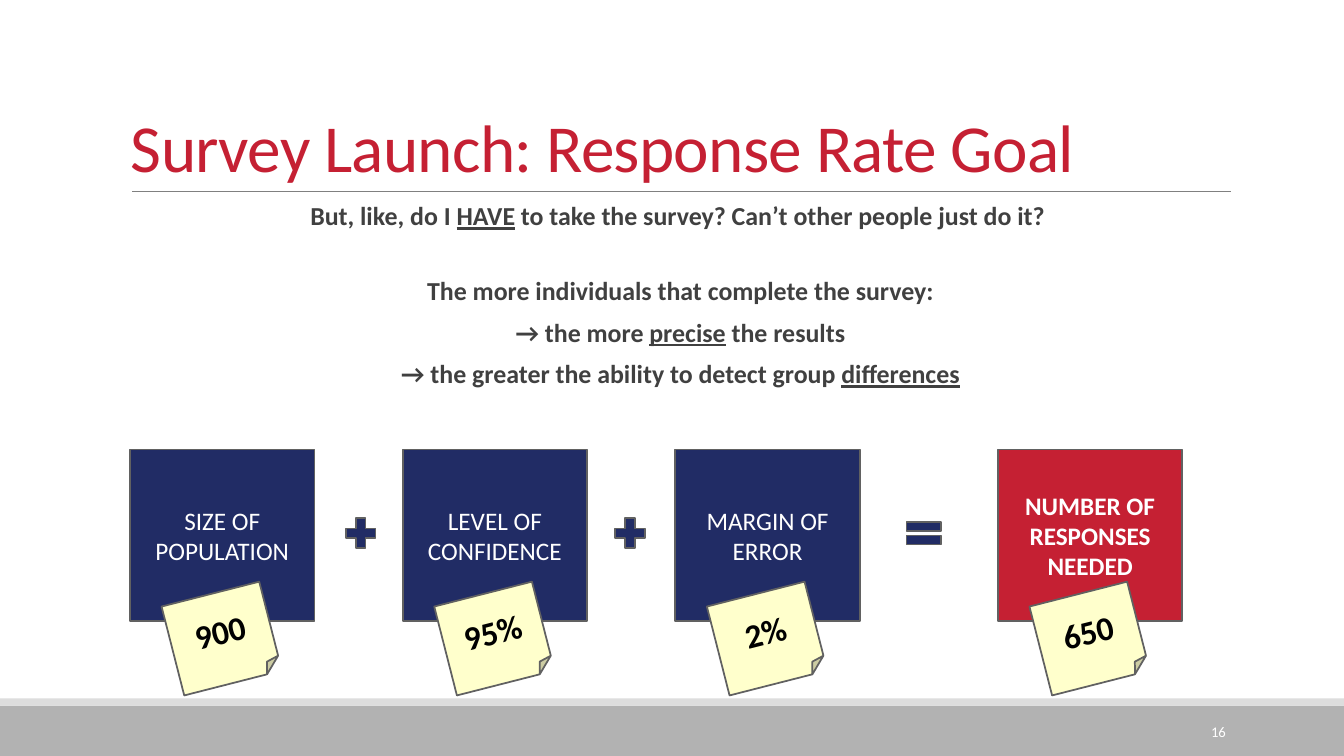
from lxml.etree import SubElement
from pptx import Presentation
from pptx.dml.color import RGBColor
from pptx.enum.shapes import MSO_CONNECTOR, MSO_SHAPE
from pptx.enum.text import MSO_ANCHOR, PP_ALIGN
from pptx.oxml.ns import qn
from pptx.util import Inches, Pt

COLUMNS, ROWS = 133.33, 75
NAVY, RED, NOTE = "212C65", "C52033", "FFFFCC"
WHITE, BLACK, DARK, OUTLINE = "FFFFFF", "000000", "404040", "616161"


def rgb(value):
    return RGBColor.from_string(value)


class SlideBuilder:
    """Places elements on a grid of COLUMNS by ROWS in one style."""

    font = "Calibri"
    line_width = 1.25

    def __init__(self, prs):
        self.cell_w = prs.slide_width / COLUMNS
        self.cell_h = prs.slide_height / ROWS
        self.s = prs.slides.add_slide(prs.slide_layouts[6])

    def box(self, col, row, cols, rows):
        return (round(col * self.cell_w), round(row * self.cell_h),
                round(cols * self.cell_w), round(rows * self.cell_h))

    def run(self, p, text, size, color, bold=False, underline=False):
        r = p.add_run()
        r.text = text
        r.font.name, r.font.size = self.font, Pt(size)
        r.font.bold, r.font.underline = bold, underline
        r.font.color.rgb = rgb(color)
        return r

    def text_box(self, at, anchor=MSO_ANCHOR.TOP):
        tf = self.s.shapes.add_textbox(*self.box(*at)).text_frame
        tf.word_wrap = True
        tf.vertical_anchor = anchor
        return tf

    def shape(self, kind, at, fill, outline=OUTLINE, rotation=0):
        sp = self.s.shapes.add_shape(kind, *self.box(*at))
        sp.shadow.inherit = False
        sp.rotation = rotation
        sp.fill.solid()
        sp.fill.fore_color.rgb = rgb(fill)
        if outline:
            sp.line.color.rgb = rgb(outline)
            sp.line.width = Pt(self.line_width)
        else:
            sp.line.fill.background()
        return sp

    def label(self, sp, text, size, color, bold):
        tf = sp.text_frame
        tf.word_wrap = True
        tf.vertical_anchor = MSO_ANCHOR.MIDDLE
        p = tf.paragraphs[0]
        p.alignment = PP_ALIGN.CENTER
        self.run(p, text, size, color, bold)

    def rule(self, col, row, end_col, color, width):
        x, y, w, _ = self.box(col, row, end_col - col, 0)
        line = self.s.shapes.add_connector(MSO_CONNECTOR.STRAIGHT, x, y, x + w, y)
        line.line.color.rgb = rgb(color)
        line.line.width = Pt(width)
        SubElement(line._element.spPr, qn("a:effectLst"))

    def title(self, text, at):
        p = self.text_box(at, MSO_ANCHOR.BOTTOM).paragraphs[0]
        p.line_spacing = 0.85
        r = self.run(p, text, 48, RED)
        r.font._element.set("spc", "-50")

    def body(self, lines, at):
        """Each line is (space before, runs); each run is (text, underlined)."""
        tf = self.text_box(at)
        tf.margin_left = tf.margin_right = 0
        for i, (space, runs) in enumerate(lines):
            p = tf.add_paragraph() if i else tf.paragraphs[0]
            p.alignment = PP_ALIGN.CENTER
            p.line_spacing = 0.7
            p.space_before, p.space_after = Pt(space), Pt(2)
            p._p.get_or_add_pPr().set("marL", str(Inches(0.1)))
            for text, underline in runs:
                self.run(p, text, 18.5, DARK, True, underline)

    def page_number(self, text, at):
        p = self.text_box(at, MSO_ANCHOR.MIDDLE).paragraphs[0]
        p.alignment = PP_ALIGN.RIGHT
        self.run(p, text, 10.5, WHITE)

    def card(self, col, text, value, fill=NAVY, bold=False):
        """A square with its value on a tilted sticky note."""
        square = self.shape(MSO_SHAPE.RECTANGLE, (col, 44.6, 18.3, 17), fill)
        self.label(square, text, 18, WHITE, bold)
        note = self.shape(MSO_SHAPE.FOLDED_CORNER, (col + 4.1, 58.8, 10, 9.1),
                          NOTE, rotation=345.7)
        self.label(note, value, 24, BLACK, True)


def main():
    prs = Presentation()
    prs.slide_width, prs.slide_height = Inches(13.333), Inches(7.5)
    slide = SlideBuilder(prs)

    slide.shape(MSO_SHAPE.RECTANGLE, (0, 70, COLUMNS, 5), "B2B2B2", None)
    slide.shape(MSO_SHAPE.RECTANGLE, (0, 69.3, COLUMNS, 0.7), "DDDDDD", None)
    slide.rule(13.1, 19, 122.1, "808080", 0.5)
    slide.title("Survey Launch: Response Rate Goal", (12, 3.1, 110, 15.9))
    slide.body([
        (12, [("But, like, do I ", False), ("HAVE", True),
              (" to take the survey? Can’t other people just do it? ", False)]),
        (36, [("The more individuals that complete the survey:", False)]),
        (12, [("→ the more ", False), ("precise", True), (" the results", False)]),
        (12, [("→ the greater the ability to detect group ", False),
              ("differences", True)]),
    ], (12, 20.2, 110, 20.4))
    slide.page_number("16", (108.3, 70.6, 14.3, 4))

    factors = [("SIZE OF POPULATION", "900"), ("LEVEL OF CONFIDENCE", "95%"),
               ("MARGIN OF ERROR", "2%")]
    for i, (text, value) in enumerate(factors):
        slide.card(12.9 + 27.05 * i, text, value)
    slide.card(99, "NUMBER OF RESPONSES NEEDED", "650", RED, True)
    for col in (33.8, 60.5):
        slide.shape(MSO_SHAPE.MATH_PLUS, (col, 50.9, 4, 4), NAVY)
    slide.shape(MSO_SHAPE.MATH_EQUAL, (89.3, 51, 4.7, 3.8), NAVY)

    prs.save("out.pptx")


if __name__ == "__main__":
    main()
